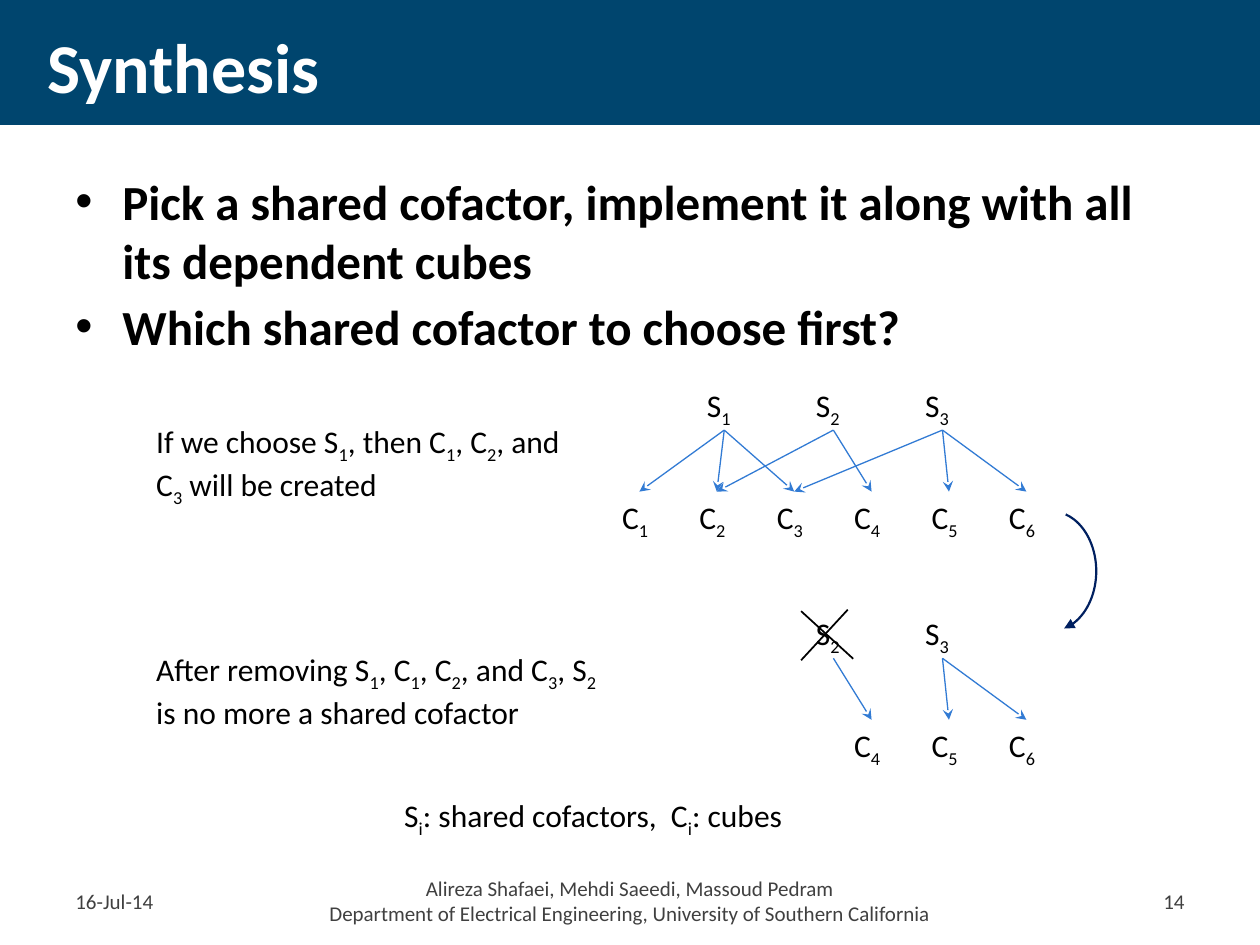
import pptx
import pptx.dml.color
import pptx.enum.shapes
import pptx.enum.text
import pptx.oxml.ns
import pptx.util
from lxml import etree

Cm = pptx.util.Cm
Pt = pptx.util.Pt
ALIGN = pptx.enum.text.PP_ALIGN
ANCHOR = pptx.enum.text.MSO_ANCHOR
SHAPE = pptx.enum.shapes.MSO_SHAPE
STRAIGHT = pptx.enum.shapes.MSO_CONNECTOR.STRAIGHT

FONT = "Calibri"
BLACK, WHITE, GREY = "000000", "FFFFFF", "404040"
BANNER, ARROW_BLUE, NAVY = "00456E", "327BD4", "002060"


def rgb(hex_code):
    """Return the colour for a hex string."""
    return pptx.dml.color.RGBColor.from_string(hex_code)


def add_child(parent, tag, **attrs):
    """Append a DrawingML element to parent."""
    return etree.SubElement(parent, pptx.oxml.ns.qn(tag), **attrs)


def add_run(p, text, size, color, bold=False, subscript=False):
    """Add one formatted run to a paragraph."""
    r = p.add_run()
    r.text = text
    r.font.name, r.font.size, r.font.bold = FONT, Pt(size), bold
    r.font.color.rgb = rgb(color)
    if subscript:
        r.font._element.set("baseline", "-25000")


def add_text(s, box, lines, size=18, color=BLACK, bold=False,
             align=ALIGN.LEFT, anchor=ANCHOR.TOP):
    """Add a text box in which the character after each underscore is a subscript."""
    sp = s.shapes.add_textbox(*map(Cm, box))
    tf = sp.text_frame
    tf.word_wrap, tf.vertical_anchor = True, anchor
    for i, line in enumerate(lines):
        p = tf.paragraphs[0] if i == 0 else tf.add_paragraph()
        p.alignment = align
        first, *rest = line.split("_")
        add_run(p, first, size, color, bold)
        for part in rest:
            add_run(p, part[0], size, color, bold, subscript=True)
            if part[1:]:
                add_run(p, part[1:], size, color, bold)
    return sp


def add_bullets(s, box, lines):
    """Add a bold bulleted list with a hanging indent."""
    sp = add_text(s, box, lines, size=28, bold=True)
    indent = Cm(0.95)
    for p in sp.text_frame.paragraphs:
        p.space_before = Pt(4)
        pPr = p._p.get_or_add_pPr()
        pPr.set("marL", str(indent))
        pPr.set("indent", str(-indent))
        add_child(pPr, "a:buFont", typeface="Arial")
        add_child(pPr, "a:buChar", char="•")


def style_line(sp, color, width, tail=None):
    """Set line colour, width and optional arrowhead."""
    sp.line.color.rgb = rgb(color)
    sp.line.width = Pt(width)
    if tail:
        add_child(sp.line._get_or_add_ln(), "a:tailEnd", type=tail)


def add_line(s, ends, color, width, tail=None):
    """Add a straight connector without a shadow."""
    sp = s.shapes.add_connector(STRAIGHT, *map(Cm, ends))
    style_line(sp, color, width, tail)
    add_child(sp._element.spPr, "a:effectLst")
    return sp


def add_graph(s, top, edges):
    """Draw shared cofactors above their cubes, joined by arrows."""
    def label(letter, n, left, pitch, y):
        return add_text(s, (left + pitch * (n - 1), y, 1.2, 1.02), [f"{letter}_{n}"])

    cofactors = {n: label("S", n, 14, 2.2, top) for n in edges}
    cubes = {n: label("C", n, 12.29, 1.56, top + 2.26)
             for n in sorted(set().union(*edges.values()))}
    for n, targets in edges.items():
        for m in targets:
            sp = add_line(s, (0, 0, 0, 0), ARROW_BLUE, 0.75, "stealth")
            sp.begin_connect(cofactors[n], 2)
            sp.end_connect(cubes[m], 0)


def add_banner(s):
    """Add the title band and its title."""
    sp = s.shapes.add_shape(SHAPE.RECTANGLE, 0, 0, Cm(25.4), Cm(2.52))
    sp.shadow.inherit = False
    sp.fill.solid()
    sp.fill.fore_color.rgb = rgb(BANNER)
    sp.line.fill.background()
    add_text(s, (0.71, 0.25, 24, 2.13), ["Synthesis"], 40, WHITE, True,
             anchor=ANCHOR.MIDDLE)


def add_footer(s):
    """Add the date, authors and slide number."""
    for left, width, align, lines in (
        (1.27, 3.02, ALIGN.LEFT, ["16-Jul-14"]),
        (4.7, 16, ALIGN.CENTER,
         ["Alireza Shafaei, Mehdi Saeedi, Massoud Pedram",
          "Department of Electrical Engineering, University of Southern California"]),
        (21.11, 3.02, ALIGN.RIGHT, ["14"]),
    ):
        add_text(s, (left, 17.65, width, 1.02), lines, 12, GREY,
                 align=align, anchor=ANCHOR.MIDDLE)


def add_step_arc(s):
    """Add the curved arrow from the first graph to the second."""
    sp = s.shapes.add_shape(SHAPE.ARC, Cm(20.3), Cm(10.31), Cm(1.8), Cm(2.41))
    sp.adjustments[0], sp.adjustments[1] = 170.37, 46.64
    sp.shadow.inherit = False
    sp.fill.background()
    style_line(sp, NAVY, 1.25, "triangle")


def main():
    """Build the slide and save it."""
    prs = pptx.Presentation()
    prs.slide_width, prs.slide_height = Cm(25.4), Cm(19.05)
    s = prs.slides.add_slide(prs.slide_layouts[6])
    add_banner(s)
    add_bullets(s, (1.27, 3.33, 22.86, 13.77), [
        "Pick a shared cofactor, implement it along with all its dependent cubes",
        "Which shared cofactor to choose first?",
    ])
    add_footer(s)
    add_graph(s, 7.65, {1: (1, 2, 3), 2: (2, 4), 3: (3, 5, 6)})
    add_graph(s, 12.25, {2: (4,), 3: (5, 6)})
    add_text(s, (2.9, 8.38, 8.79, 1.8),
             ["If we choose S_1, then C_1, C_2, and C_3 will be created"])
    add_text(s, (2.9, 12.98, 9.6, 1.8),
             ["After removing S_1, C_1, C_2, and C_3, S_2 is no more a shared cofactor"])
    add_step_arc(s)
    for ends in ((16.15, 12.32, 17.2, 13.28), (17.09, 12.29, 16.15, 13.31)):
        add_line(s, ends, BLACK, 1)
    add_text(s, (7.9, 15.93, 9.6, 1.02), ["S_i: shared cofactors,  C_i: cubes"])
    prs.save("out.pptx")


if __name__ == "__main__":
    main()
